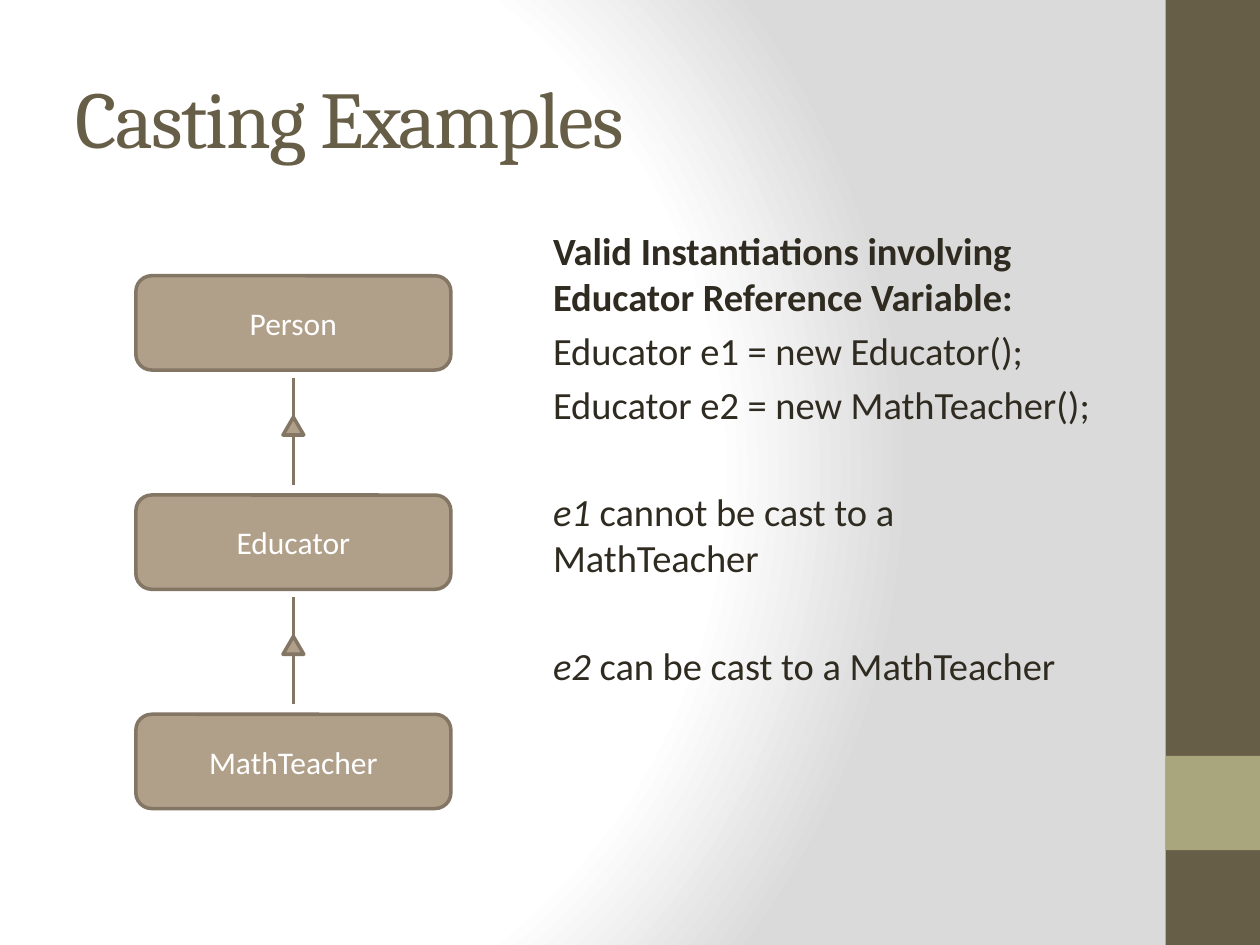
from dataclasses import dataclass

from lxml import etree
from pptx import Presentation
from pptx import util as u
from pptx.dml.color import RGBColor
from pptx.enum import shapes, text
from pptx.oxml import parse_xml
from pptx.oxml.ns import nsdecls, qn
from pptx.util import Cm


@dataclass(frozen=True)
class Theme:
    heading_font: str = "Cambria"
    body_font: str = "Calibri"
    olive: str = "675E47"
    sage: str = "A9A57C"
    ink: str = "2F2B20"
    box: str = "B1A089"
    outline: str = "837665"
    white: str = "FFFFFF"
    shade: str = "DADADA"
    title_size: int = 46
    body_size: int = 22
    label_size: int = 18
    line_width: int = 2


theme = Theme()


def add_block(kind, left, top, width, height, fill, line=None):
    sp = s.shapes.add_shape(kind, Cm(left), Cm(top), Cm(width), Cm(height))
    sp.shadow.inherit = False
    sp.fill.solid()
    sp.fill.fore_color.rgb = RGBColor.from_string(fill)
    if line:
        sp.line.color.rgb = RGBColor.from_string(line)
        sp.line.width = u.Pt(theme.line_width)
    else:
        sp.line.fill.background()
    return sp


def style(r, font, size, color):
    r.font.name = font
    r.font.size = u.Pt(size)
    r.font.color.rgb = RGBColor.from_string(color)


prs = Presentation()
prs.slide_width, prs.slide_height = Cm(25.4), Cm(19.05)
s = prs.slides.add_slide(prs.slide_layouts[5])

# Background: circular gradient
s.background.fill.solid()
bg = s.background._cSld.bg.bgPr
stops = "".join(
    f'<a:gs pos="{pos * 1000}"><a:srgbClr val="{color}"/></a:gs>'
    for pos, color in [(0, theme.white), (75, theme.white), (100, theme.shade)])
bg.replace(bg.find(qn("a:solidFill")), parse_xml(
    f'<a:gradFill {nsdecls("a")} rotWithShape="1"><a:gsLst>{stops}</a:gsLst>'
    '<a:path path="circle">'
    '<a:fillToRect l="20000" t="50000" r="100000" b="50000"/>'
    '</a:path></a:gradFill>'))

# Side band
add_block(shapes.MSO_SHAPE.RECTANGLE, 23.5, 0, 1.9, 19.05, theme.olive)
add_block(shapes.MSO_SHAPE.RECTANGLE, 23.5, 15.24, 1.9, 1.9, theme.sage)

# Title
sp = s.shapes.title
sp.left, sp.top, sp.width, sp.height = Cm(1.27), Cm(0.76), Cm(21.16), Cm(3.18)
tf = sp.text_frame
tf.text = "Casting Examples"
tf.vertical_anchor = text.MSO_ANCHOR.MIDDLE
tf.auto_size = text.MSO_AUTO_SIZE.NONE
p = tf.paragraphs[0]
p.alignment = text.PP_ALIGN.LEFT
r = p.runs[0]
style(r, theme.heading_font, theme.title_size, theme.olive)
r.font._element.set("spc", "-100")

# Explanation: (space before in points, [(text, bold, italic), ...])
lines = [
    (4.4, [("Valid Instantiations involving Educator Reference Variable:",
            True, False)]),
    (4.4, [("Educator e1 = new Educator();", False, False)]),
    (4.4, [("Educator e2 = new MathTeacher();", False, False)]),
    (35, [("e1 ", False, True),
          ("cannot be cast to a MathTeacher", False, False)]),
    (35, [("e2", False, True),
          (" can be cast to a MathTeacher", False, False)]),
]
tf = s.shapes.add_textbox(Cm(10.59), Cm(4.45), Cm(11.86), Cm(13.34)).text_frame
tf.word_wrap = True
tf.margin_left = Cm(0.56)
for i, (gap, runs) in enumerate(lines):
    p = tf.add_paragraph() if i else tf.paragraphs[0]
    p.space_before = u.Pt(gap)
    for words, bold, italic in runs:
        r = p.add_run()
        r.text = words
        style(r, theme.body_font, theme.body_size, theme.ink)
        r.font.bold, r.font.italic = bold, italic

# Class hierarchy: boxes, each joined to the one below
classes = ["Person", "Educator", "MathTeacher"]
left, first_top, width, height, pitch = 2.74, 5.56, 6.35, 1.9, 4.42
center = left + width / 2
for i, name in enumerate(classes):
    top = first_top + i * pitch
    sp = add_block(shapes.MSO_SHAPE.ROUNDED_RECTANGLE, left, top, width, height,
                   theme.box, theme.outline)
    tf = sp.text_frame
    tf.text = name
    tf.vertical_anchor = text.MSO_ANCHOR.MIDDLE
    p = tf.paragraphs[0]
    p.alignment = text.PP_ALIGN.CENTER
    style(p.runs[0], theme.body_font, theme.label_size, theme.white)
    if i == len(classes) - 1:
        continue
    line = s.shapes.add_connector(
        shapes.MSO_CONNECTOR.STRAIGHT, Cm(center), Cm(top + pitch - 0.2),
        Cm(center), Cm(top + height + 0.16))
    line.line.color.rgb = RGBColor.from_string(theme.outline)
    line.line.width = u.Pt(theme.line_width)
    etree.SubElement(line._element.spPr, qn("a:effectLst"))
    add_block(shapes.MSO_SHAPE.ISOSCELES_TRIANGLE, center - 0.21, top + 2.85,
              0.42, 0.36, theme.box, theme.outline)

prs.save("out.pptx")
